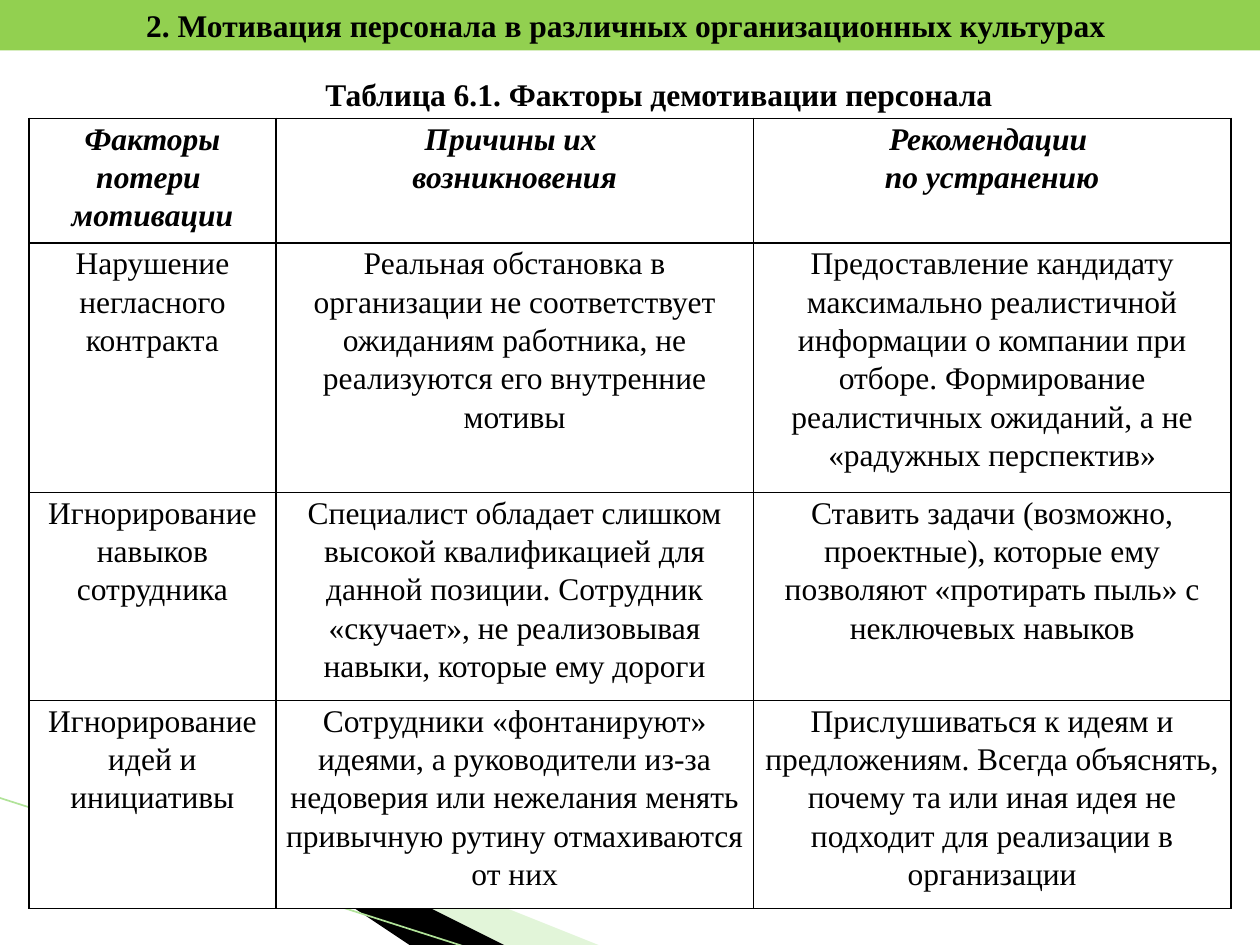
from lxml.etree import SubElement
from pptx import Presentation
from pptx.dml.color import RGBColor
from pptx.enum.shapes import MSO_CONNECTOR
from pptx.enum.text import MSO_ANCHOR, MSO_AUTO_SIZE, PP_ALIGN
from pptx.oxml import parse_xml
from pptx.oxml.ns import nsdecls, qn
from pptx.util import Inches, Pt

COLORS = {
    "banner": "92D050",
    "pale green": "B8E7A1",
    "green line": "B1E399",
    "black": "000000",
    "white": "FFFFFF",
}
FONT = "Times New Roman"
BANNER_HEIGHT = 0.4
TABLE_LEFT, TABLE_TOP = 0.23, 0.94
COLUMN_WIDTHS = [1.96, 3.79, 3.79]
ROW_LINES = [3, 6, 5, 5]
LINE_HEIGHT = 0.33

ROWS = [
    ["Факторы потери \nмотивации", "Причины их \nвозникновения", "Рекомендации \nпо устранению"],
    ["Нарушение негласного контракта",
     "Реальная обстановка в организации не соответствует ожиданиям работника, "
     "не реализуются его внутренние мотивы",
     "Предоставление кандидату максимально реалистичной информации о компании при отборе. "
     "Формирование реалистичных ожиданий, а не «радужных перспектив»"],
    ["Игнорирование навыков сотрудника",
     "Специалист обладает слишком высокой квалификацией для данной позиции. "
     "Сотрудник «скучает», не реализовывая навыки, которые ему дороги",
     "Ставить задачи (возможно, проектные), которые ему позволяют «протирать пыль» "
     "с неключевых навыков"],
    ["Игнорирование идей и инициативы",
     "Сотрудники «фонтанируют» идеями, а руководители из-за недоверия или нежелания менять "
     "привычную рутину отмахиваются от них",
     "Прислушиваться к идеям и предложениям. Всегда объяснять, почему та или иная идея "
     "не подходит для реализации в организации"],
]


def color(name):
    return RGBColor.from_string(COLORS[name])


def write(text_frame, text, bold=False, italic=False, line_spacing=None):
    """Fill a text frame with centred 18 pt black text."""
    text_frame.text = text
    text_frame.word_wrap = True
    for paragraph in text_frame.paragraphs:
        paragraph.alignment = PP_ALIGN.CENTER
        if line_spacing:
            paragraph.line_spacing = line_spacing
        for run in paragraph.runs:
            run.font.name = FONT
            run.font.size = Pt(18)
            run.font.bold = bold
            run.font.italic = italic
            run.font.color.rgb = color("black")


presentation = Presentation()
presentation.slide_width, presentation.slide_height = Inches(10), Inches(7.5)
slide = presentation.slides.add_slide(presentation.slide_layouts[5])
shapes = slide.shapes

# Corner wedges and line behind the table
wedges = [
    ("pale green", 40, [(0.55, 6.5), (5.95, 7.51), (4.56, 7.51)]),
    ("black", 100, [(0.53, 6.49), (4.57, 7.51), (3.72, 7.52)]),
]
for name, opacity, points in wedges:
    builder = shapes.build_freeform(*points[0], scale=Inches(1))
    builder.add_line_segments(points[1:], close=True)
    wedge = builder.convert_to_shape()
    wedge.shadow.inherit = False
    wedge.fill.solid()
    wedge.fill.fore_color.rgb = color(name)
    wedge.line.fill.background()
    if opacity < 100:
        fill_color = wedge.fill._xPr.find(qn("a:solidFill"))[0]
        SubElement(fill_color, qn("a:alpha")).set("val", str(opacity * 1000))

corner_line = shapes.add_connector(
    MSO_CONNECTOR.STRAIGHT, Inches(-0.01), Inches(6.33), Inches(3.71), Inches(7.52))
corner_line.line.color.rgb = color("green line")
corner_line.line.width = Pt(0.95)
SubElement(corner_line._element.spPr, qn("a:effectLst"))

# Title banner
title = shapes.title
title.left, title.top = 0, 0
title.width, title.height = presentation.slide_width, Inches(BANNER_HEIGHT)
title.fill.solid()
title.fill.fore_color.rgb = color("banner")
write(title.text_frame, "2. Мотивация персонала в различных организационных культурах ", bold=True)
title.text_frame.auto_size = MSO_AUTO_SIZE.NONE
title.text_frame.vertical_anchor = MSO_ANCHOR.MIDDLE

# Table
table = shapes.add_table(
    len(ROWS), len(COLUMN_WIDTHS), Inches(TABLE_LEFT), Inches(TABLE_TOP),
    Inches(sum(COLUMN_WIDTHS)), Inches(sum(ROW_LINES) * LINE_HEIGHT)).table
for column, width in zip(table.columns, COLUMN_WIDTHS):
    column.width = Inches(width)
for row, lines in zip(table.rows, ROW_LINES):
    row.height = Inches(lines * LINE_HEIGHT)

for row_index, texts in enumerate(ROWS):
    is_header = row_index == 0
    for column_index, text in enumerate(texts):
        cell = table.cell(row_index, column_index)
        cell.margin_left = cell.margin_right = Inches(0.02)
        cell.margin_top = cell.margin_bottom = 0
        write(cell.text_frame, text, bold=is_header, italic=is_header, line_spacing=1.1)
        cell.fill.solid()
        cell.fill.fore_color.rgb = color("white")
        properties = cell._tc.get_or_add_tcPr()
        for position, side in enumerate(["lnL", "lnR", "lnT", "lnB"]):
            properties.insert(position, parse_xml(
                f'<a:{side} {nsdecls("a")} w="{Pt(1)}"><a:solidFill>'
                f'<a:srgbClr val="{COLORS["black"]}"/></a:solidFill></a:{side}>'))

# Table caption
caption = shapes.add_textbox(Inches(1.09), Inches(0.55), Inches(8.28), Inches(BANNER_HEIGHT))
write(caption.text_frame, "Таблица 6.1. Факторы демотивации персонала", bold=True)

presentation.save("out.pptx")
